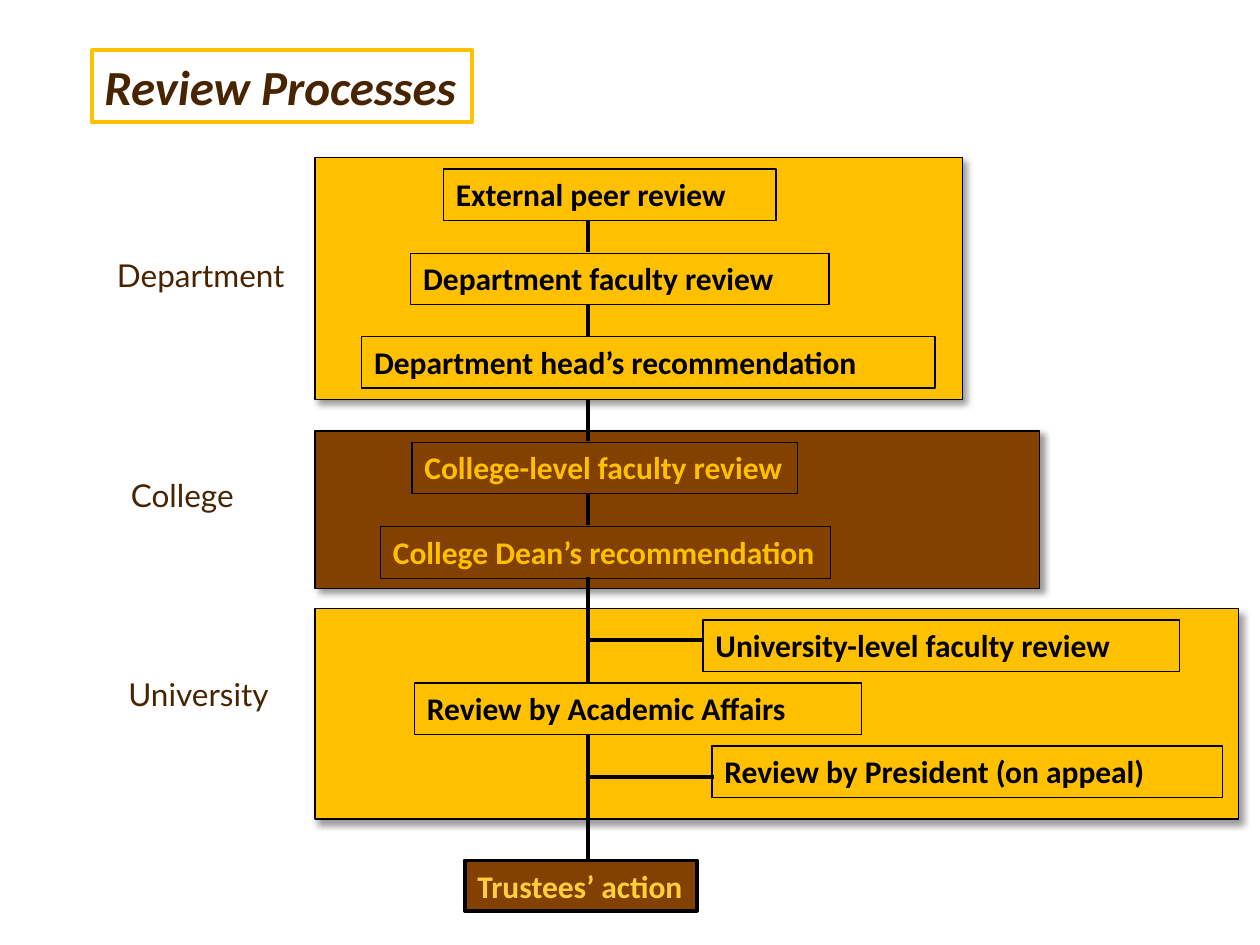
from lxml.etree import SubElement
from pptx import Presentation
from pptx.dml.color import RGBColor
from pptx.enum.shapes import MSO_CONNECTOR, MSO_SHAPE
from pptx.enum.text import MSO_ANCHOR, PP_ALIGN
from pptx.oxml.ns import qn
from pptx.util import Inches, Pt

COLORS = {
    "gold": "FFC000",
    "light_gold": "FFD03B",
    "brown": "824100",
    "dark_brown": "482400",
    "black": "000000",
}

PANELS = [
    (2.5, 4.83, 7.33, 1.67, "gold"),
    (2.5, 1.25, 5.14, 1.92, "gold"),
    (2.5, 3.42, 5.75, 1.25, "brown"),
]
STEPS = [
    ("External peer review", 3.52, 1.34, 2.64, "black"),
    ("Department faculty review", 3.26, 2.01, 3.32, "black"),
    ("Department head’s recommendation", 2.87, 2.67, 4.55, "black"),
    ("College-level faculty review", 3.27, 3.51, 3.06, "gold"),
    ("College Dean’s recommendation", 3.02, 4.18, 3.57, "gold"),
    ("University-level faculty review", 5.58, 4.92, 3.78, "black"),
    ("Review by Academic Affairs", 3.29, 5.42, 3.55, "black"),
    ("Review by President (on appeal)", 5.65, 5.92, 4.05, "black"),
]
LEVELS = [
    ("Department", 0.83, 1.98, 1.75),
    ("College", 0.94, 3.73, 1.42),
    ("University", 0.92, 5.31, 1.5),
]
STEP_HEIGHT = 0.41
LEVEL_HEIGHT = 0.4
SPINE_X = 4.67
SPINE_SPANS = [(1.75, 2), (2.42, 2.67), (3.17, 3.5), (3.92, 4.17), (4.58, 5.42), (5.83, 6.84)]
BRANCHES = [(5.58, 5.08), (5.67, 6.17)]


def rgb(name):
    return RGBColor.from_string(COLORS[name])


def add_box(slide, left, top, width, height, fill=None, line="black", weight=0.75):
    shape = slide.shapes.add_shape(
        MSO_SHAPE.RECTANGLE, Inches(left), Inches(top), Inches(width), Inches(height))
    shape.shadow.inherit = False
    if fill:
        shape.fill.solid()
        shape.fill.fore_color.rgb = rgb(fill)
    else:
        shape.fill.background()
    shape.line.color.rgb = rgb(line)
    shape.line.width = Pt(weight)
    return shape


def add_drop_shadow(shape):
    effects = shape._element.spPr.find(qn("a:effectLst"))
    shadow = SubElement(effects, qn("a:outerShdw"), blurRad=str(Pt(4)), dist=str(Pt(3)),
                        dir="2700000", algn="tl", rotWithShape="0")
    color = SubElement(shadow, qn("a:srgbClr"), val=COLORS["black"])
    SubElement(color, qn("a:alpha"), val="40000")


def write(shape, text, color, size=18, font="Calibri", bold=True, italic=False):
    frame = shape.text_frame
    frame.word_wrap = True
    frame.margin_right = 0
    frame.vertical_anchor = MSO_ANCHOR.TOP
    paragraph = frame.paragraphs[0]
    paragraph.text = text
    paragraph.alignment = PP_ALIGN.LEFT
    paragraph.font.name = font
    paragraph.font.size = Pt(size)
    paragraph.font.bold = bold
    paragraph.font.italic = italic
    paragraph.font.color.rgb = rgb(color)


def add_line(slide, start_x, start_y, end_x, end_y):
    connector = slide.shapes.add_connector(
        MSO_CONNECTOR.STRAIGHT, Inches(start_x), Inches(start_y), Inches(end_x), Inches(end_y))
    connector.line.color.rgb = rgb("black")
    connector.line.width = Pt(2.25)
    SubElement(connector._element.spPr, qn("a:effectLst"))


def main():
    presentation = Presentation()
    presentation.slide_width = Inches(10)
    presentation.slide_height = Inches(7.5)
    slide = presentation.slides.add_slide(presentation.slide_layouts[6])

    for left, top, width, height, fill in PANELS:
        add_drop_shadow(add_box(slide, left, top, width, height, fill))

    for text, left, top, width, color in STEPS:
        write(add_box(slide, left, top, width, STEP_HEIGHT), text, color)

    final_step = add_box(slide, 3.69, 6.83, 1.84, 0.4, "brown", weight=2.25)
    write(final_step, "Trustees’ action", "light_gold")

    title = add_box(slide, 0.73, 0.4, 3.02, 0.57, line="gold", weight=2.25)
    write(title, "Review Processes", "dark_brown", size=28, italic=True)

    for top, bottom in SPINE_SPANS:
        add_line(slide, SPINE_X, top, SPINE_X, bottom)
    for right, y in BRANCHES:
        add_line(slide, right, y, SPINE_X, y)

    for text, left, top, width in LEVELS:
        label = slide.shapes.add_textbox(
            Inches(left), Inches(top), Inches(width), Inches(LEVEL_HEIGHT))
        write(label, text, "dark_brown", font="Lato", bold=False)

    presentation.save("out.pptx")


if __name__ == "__main__":
    main()
